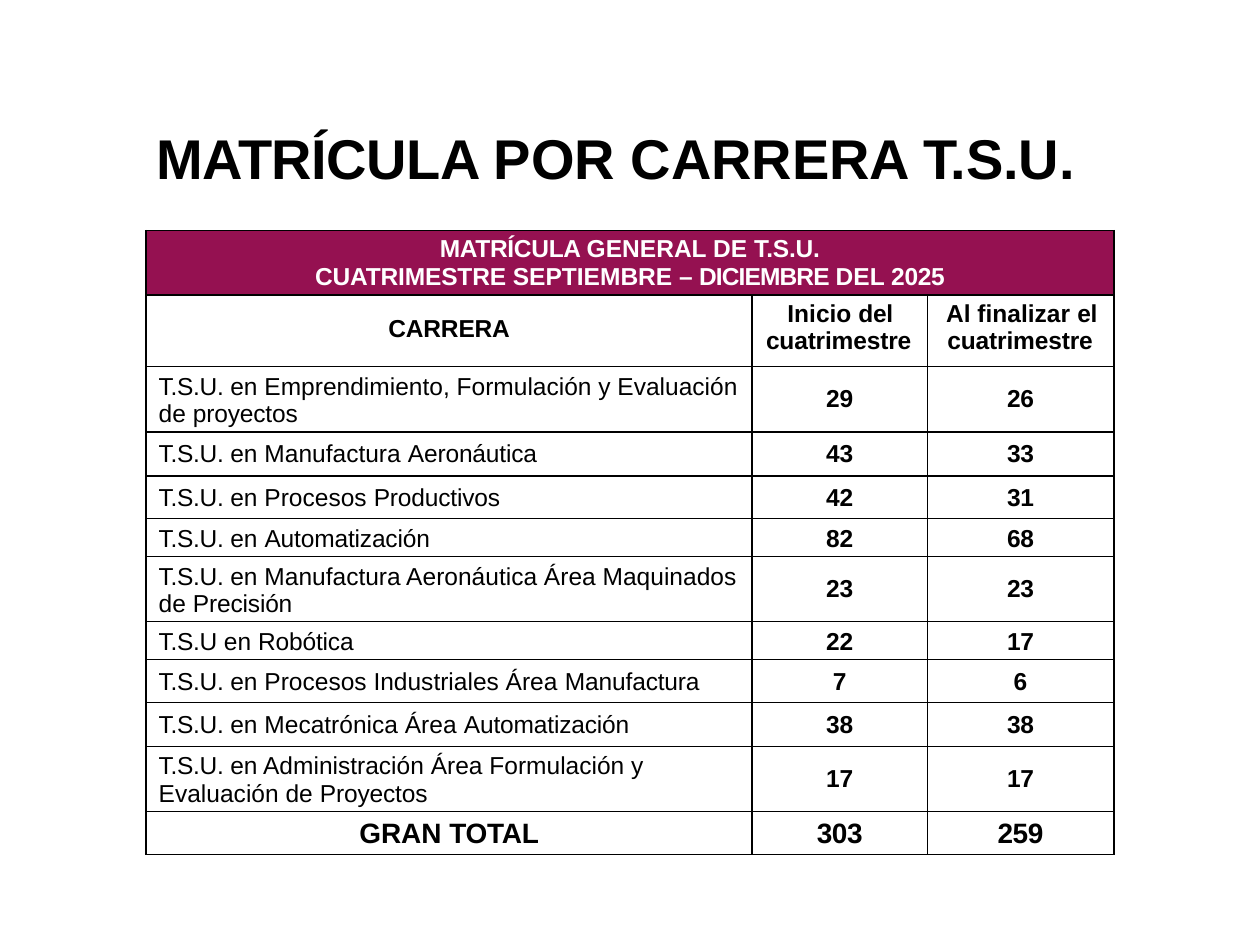
from pptx import Presentation
from pptx.dml.color import RGBColor
from pptx.enum.text import MSO_ANCHOR, PP_ALIGN
from pptx.oxml.ns import qn
from pptx.util import Inches, Pt
from lxml.etree import SubElement

BLACK = RGBColor(0x00, 0x00, 0x00)
WHITE = RGBColor(0xFF, 0xFF, 0xFF)
PLUM = RGBColor(0x95, 0x11, 0x51)

# Content: a paragraph is a list of (text, letter spacing in points)
TITLE = [("MATRÍCULA ", -0.3), ("POR ", 0), ("CARRERA T.S.U.", -0.1)]
BANNER = [
    [("MATRÍCULA ", -0.2), ("GENERAL DE ", 0), ("T.S.U.", -0.1)],
    [("CUATRIMESTRE ", -0.1), ("SEPTIEMBRE –", 0), (" DICIEMBRE ", -0.5),
     ("DEL ", 0), ("2025", -0.2)],
]
# Heading, top inset, left indent, first-line indent
HEADINGS = [
    ([("CARRERA", -0.1)], 0.16, None, 0),
    ([("Inicio ", 0), ("del ", -0.2), ("cuatrimestre", -0.1)], 0.04, 0.11, 0.17),
    ([("Al finalizar ", 0), ("el ", -0.2), ("cuatrimestre", -0.1)], 0.04, 0.16, -0.01),
]
# Career, start, end, row height, top inset of the name, top inset of the figures
CAREERS = [
    ("T.S.U. en Emprendimiento, Formulación y Evaluación de proyectos", 29, 26, 0.51, 0.05, 0.15),
    ("T.S.U. en Manufactura Aeronáutica", 43, 33, 0.35, 0.07, 0.07),
    ("T.S.U. en Procesos Productivos", 42, 31, 0.34, 0.07, 0.07),
    ("T.S.U. en Automatización", 82, 68, 0.3, 0.05, 0.05),
    ("T.S.U. en Manufactura Aeronáutica Área Maquinados de Precisión", 23, 23, 0.51, 0.05, 0.15),
    ("T.S.U en Robótica", 22, 17, 0.3, 0.05, 0.05),
    ("T.S.U. en Procesos Industriales Área Manufactura", 7, 6, 0.34, 0.07, 0.07),
    ("T.S.U. en Mecatrónica Área Automatización", 38, 38, 0.35, 0.07, 0.07),
    ("T.S.U. en Administración Área Formulación y Evaluación de Proyectos", 17, 17, 0.51, 0.05, 0.15),
]
TOTALS = [[("GRAN ", 0), ("TOTAL", -0.1)], [("303", -0.2)], [("259", -0.2)]]
COLUMN_WIDTHS = [4.81, 1.39, 1.48]
ROW_HEIGHTS = [0.51, 0.57] + [career[3] for career in CAREERS] + [0.34]


def write(frame, paragraphs, size=14, color=BLACK, bold=True, left=None, first=0):
    """Fill a text frame; paragraphs without a left indent are centred."""
    frame.word_wrap = True
    for number, runs in enumerate(paragraphs):
        paragraph = frame.add_paragraph() if number else frame.paragraphs[0]
        paragraph.alignment = PP_ALIGN.CENTER if left is None else PP_ALIGN.LEFT
        if left is not None:
            props = paragraph._p.get_or_add_pPr()
            props.set("marL", str(Inches(left)))
            props.set("indent", str(Inches(first)))
        for text, spacing in runs:
            run = paragraph.add_run()
            run.text = text
            run.font.name = "Arial"
            run.font.size = Pt(size)
            run.font.bold = bold
            run.font.color.rgb = color
            run._r.get_or_add_rPr().set("spc", str(round(spacing * 100)))


def set_insets(area, top):
    area.margin_left = area.margin_right = area.margin_bottom = 0
    area.margin_top = Inches(top)


def draw_borders(cell):
    props = cell._tc.get_or_add_tcPr()
    for position, side in enumerate(("a:lnL", "a:lnR", "a:lnT", "a:lnB")):
        line = SubElement(props, qn(side), w=str(Pt(1)))
        fill = SubElement(line, qn("a:solidFill"))
        SubElement(fill, qn("a:srgbClr"), val=str(BLACK))
        props.insert(position, line)


def fill_cell(cell, paragraphs, top, **text_format):
    set_insets(cell, top)
    cell.vertical_anchor = MSO_ANCHOR.TOP
    write(cell.text_frame, paragraphs, **text_format)


def career_runs(name):
    """Tighten the abbreviation and the last word of a career name."""
    prefix, rest = name.split(" ", 1)
    middle, last = rest.rsplit(" ", 1)
    return [(prefix + " ", -0.2), (middle + " ", 0), (last, -0.1)]


deck = Presentation()
deck.slide_width, deck.slide_height = Inches(10), Inches(7.5)
slide = deck.slides.add_slide(deck.slide_layouts[6])

# Title
title = slide.shapes.add_textbox(Inches(1.23), Inches(0.92), Inches(7.54), Inches(0.55))
set_insets(title.text_frame, 0.06)
write(title.text_frame, [TITLE], size=32, left=0.01)

# Table grid
enrolment = slide.shapes.add_table(
    len(ROW_HEIGHTS), len(COLUMN_WIDTHS), Inches(1.16), Inches(1.83),
    Inches(sum(COLUMN_WIDTHS)), Inches(sum(ROW_HEIGHTS))).table
enrolment.first_row = enrolment.horz_banding = False
for column, width in zip(enrolment.columns, COLUMN_WIDTHS):
    column.width = Inches(width)
for number, (row, height) in enumerate(zip(enrolment.rows, ROW_HEIGHTS)):
    row.height = Inches(height)
    for cell in row.cells:
        if number == 0:
            cell.fill.solid()
            cell.fill.fore_color.rgb = PLUM
        else:
            cell.fill.background()
        draw_borders(cell)

# Banner and column headings
enrolment.cell(0, 0).merge(enrolment.cell(0, 2))
fill_cell(enrolment.cell(0, 0), BANNER, 0.04, color=WHITE)
for col, (runs, top, left, first) in enumerate(HEADINGS):
    fill_cell(enrolment.cell(1, col), [runs], top, left=left, first=first)

# Careers
for row, (name, start, end, _, name_top, figure_top) in enumerate(CAREERS, 2):
    fill_cell(enrolment.cell(row, 0), [career_runs(name)], name_top, bold=False, left=0.1)
    for col, figure in enumerate((start, end), 1):
        fill_cell(enrolment.cell(row, col), [[(str(figure), -0.2)]], figure_top)

# Grand total
for col, runs in enumerate(TOTALS):
    fill_cell(enrolment.cell(len(ROW_HEIGHTS) - 1, col), [runs], 0.05, size=16)

deck.save("out.pptx")
